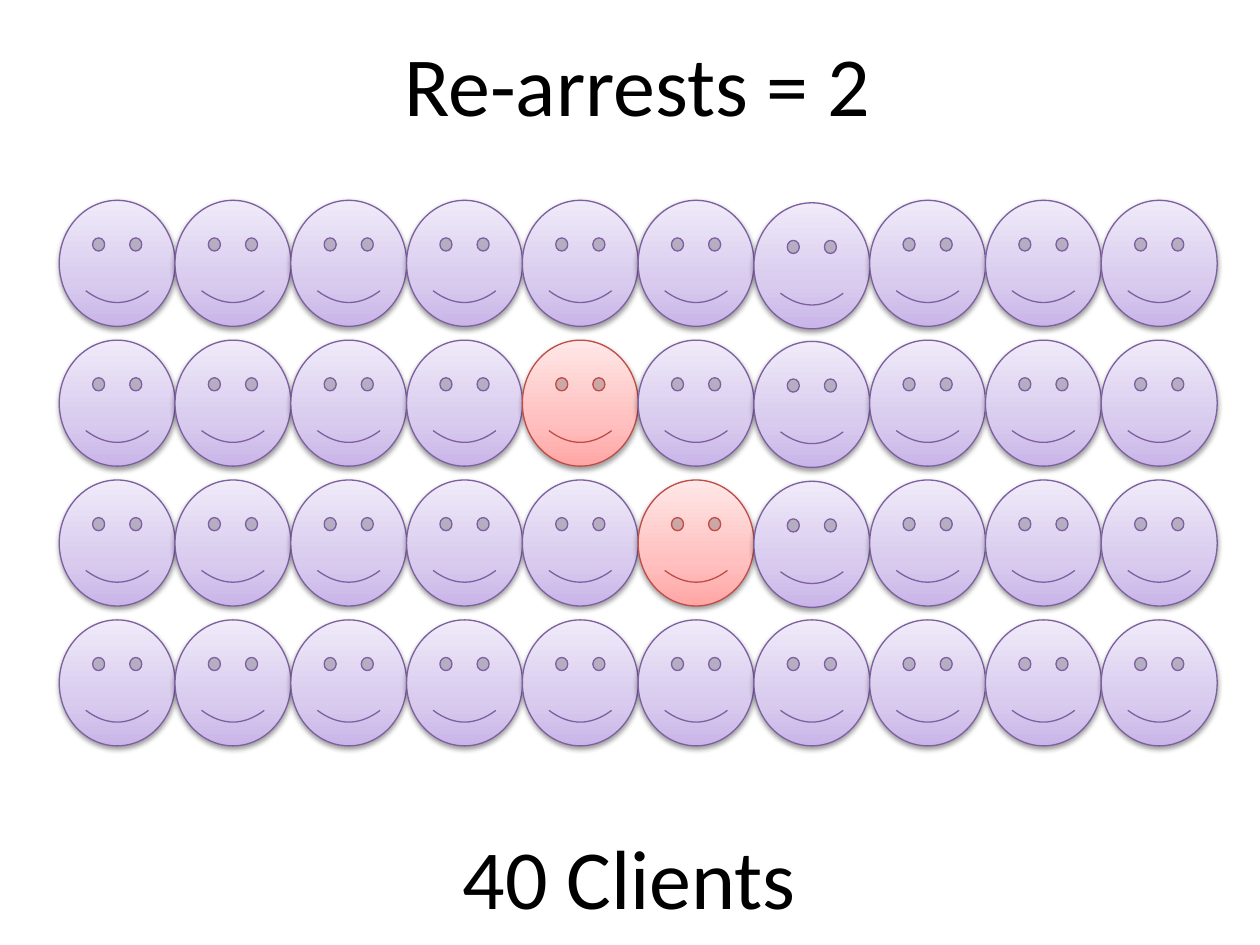
from lxml import etree
from pptx import Presentation
from pptx.dml.color import RGBColor
from pptx.enum.shapes import MSO_SHAPE
from pptx.enum.text import MSO_ANCHOR, MSO_AUTO_SIZE, PP_ALIGN
from pptx.util import Inches, Pt

FACE = MSO_SHAPE.SMILEY_FACE
CENTER = PP_ALIGN.CENTER
TOP = MSO_ANCHOR.TOP
NO_FIT = MSO_AUTO_SIZE.NONE
NS = "http://schemas.openxmlformats.org/drawingml/2006/main"

# Content
TITLE = "Re-arrests = 2"
CAPTION = "40 Clients"
ROWS, COLS = 4, 10
ARRESTED = {(1, 4), (2, 5)}  # row, column
NUDGED = {(0, 6): 0.02, (1, 6): 0.01, (2, 6): 0.01}  # small drop in inches

# Looks: line colour, then gradient stops from bottom to top
PURPLE = ("7D60A0", [(0, "C9B5E8"), (35, "D8CBEE"), (100, "F0EAF9")])
RED = ("BF4C48", [(0, "FFA6A5"), (35, "FFC0BF"), (100, "FFE7E7")])

# Grid in inches
LEFT, UPPER = 0.47, 1.59
WIDE, HIGH = 0.92, 1
STEP_X, STEP_Y = (8.74 - LEFT) / (COLS - 1), 1.11


def color(code):
    return RGBColor.from_string(code)


def write(box, text, at, size=48, font="Calibri", ink="000000"):
    box.left, box.top, box.width, box.height = map(Inches, at)
    frame = box.text_frame
    frame.word_wrap = True
    frame.auto_size = NO_FIT
    frame.vertical_anchor = TOP
    para = frame.paragraphs[0]
    para.alignment = CENTER
    run = para.add_run()
    run.text = text
    run.font.size = Pt(size)
    run.font.name = font
    run.font.color.rgb = color(ink)


def shade(shape, stops):
    """Give the shape an upward gradient and a soft shadow below."""
    marks = "".join(
        f'<a:gs pos="{pos * 1000}"><a:srgbClr val="{code}"/></a:gs>'
        for pos, code in stops)
    grad = etree.fromstring(
        f'<a:gradFill xmlns:a="{NS}" rotWithShape="1"><a:gsLst>{marks}</a:gsLst>'
        '<a:lin ang="16200000" scaled="0"/></a:gradFill>')
    glow = etree.fromstring(
        f'<a:effectLst xmlns:a="{NS}"><a:outerShdw blurRad="40000" dist="20000" '
        'dir="5400000" rotWithShape="0"><a:srgbClr val="000000">'
        '<a:alpha val="38000"/></a:srgbClr></a:outerShdw></a:effectLst>')
    props = shape._element.spPr
    props.find(f"{{{NS}}}prstGeom").addnext(grad)
    props.append(glow)


def add_face(slide, x, y, look):
    edge, stops = look
    face = slide.shapes.add_shape(FACE, *map(Inches, (x, y, WIDE, HIGH)))
    face.line.color.rgb = color(edge)
    face.line.width = Pt(0.75)
    shade(face, stops)


def main():
    deck = Presentation()
    deck.slide_width, deck.slide_height = Inches(10), Inches(7.5)
    slide = deck.slides.add_slide(deck.slide_layouts[5])

    # One face per client
    for row in range(ROWS):
        for col in range(COLS):
            spot = (row, col)
            add_face(slide, LEFT + col * STEP_X,
                     UPPER + row * STEP_Y + NUDGED.get(spot, 0),
                     RED if spot in ARRESTED else PURPLE)

    # Title and caption
    write(slide.shapes.title, TITLE, (0.62, 0.21, 8.88, 0.91))
    note = slide.shapes.add_textbox(0, 0, 0, 0)
    write(note, CAPTION, (0.62, 6.5, 8.75, 0.91))

    deck.save("out.pptx")


if __name__ == "__main__":
    main()
